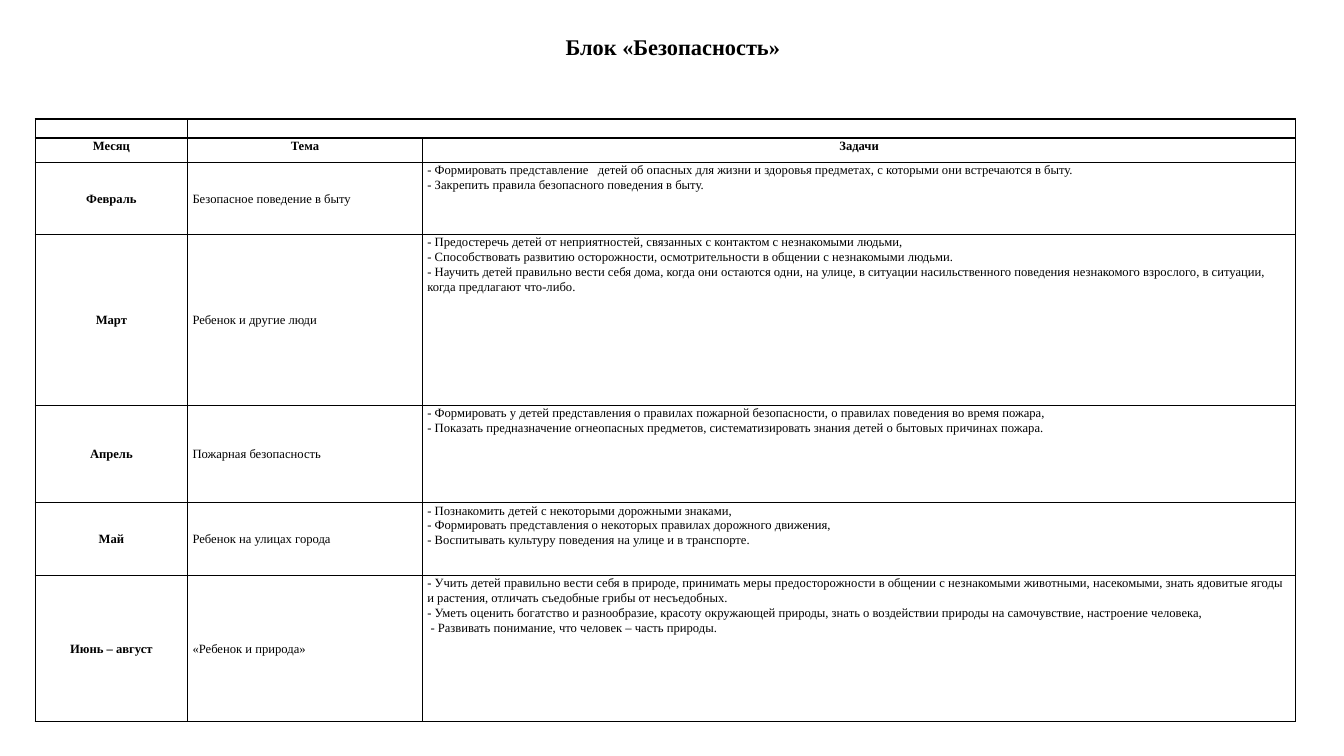
from dataclasses import dataclass

from lxml.etree import SubElement
from pptx import Presentation
from pptx.dml.color import RGBColor
from pptx.enum.text import MSO_ANCHOR, PP_ALIGN
from pptx.oxml.ns import qn
from pptx.table import _Cell
from pptx.util import Pt

FONT = "Times New Roman"
BLACK = "000000"
WHITE = "FFFFFF"
BODY_SIZE = 9
COLUMN_WIDTHS = [108.72, 167.76, 624]
TITLE_HEIGHT, EMPTY_HEIGHT, HEADER_HEIGHT = 72, 13.68, 17.28


@dataclass
class Month:
    name: str
    topic: str
    tasks: list[str]
    height: float


MONTHS = [
    Month("Февраль", "Безопасное поведение в быту", [
        "- Формировать представление   детей об опасных для жизни и здоровья предметах, "
        "с которыми они встречаются в быту.",
        "- Закрепить правила безопасного поведения в быту.",
    ], 51.84),
    Month("Март", "Ребенок и другие люди", [
        "- Предостеречь детей от неприятностей, связанных с контактом с незнакомыми людьми,",
        "- Способствовать развитию осторожности, осмотрительности в общении с незнакомыми людьми.",
        "- Научить детей правильно вести себя дома, когда они остаются одни, на улице, "
        "в ситуации насильственного поведения незнакомого взрослого, в ситуации, "
        "когда предлагают что-либо.",
    ], 121.68),
    Month("Апрель", "Пожарная безопасность", [
        "- Формировать у детей представления о правилах пожарной безопасности, "
        "о правилах поведения во время пожара,",
        "- Показать предназначение огнеопасных предметов, систематизировать знания детей "
        "о бытовых причинах пожара.",
    ], 69.84),
    Month("Май", "Ребенок на улицах города", [
        "- Познакомить детей с некоторыми дорожными знаками,",
        "- Формировать представления о некоторых правилах дорожного движения,",
        "- Воспитывать культуру поведения на улице и в транспорте.",
    ], 51.84),
    Month("Июнь – август", "«Ребенок и природа»", [
        "- Учить детей правильно вести себя в природе, принимать меры предосторожности "
        "в общении с незнакомыми животными, насекомыми, знать ядовитые ягоды и растения, "
        "отличать съедобные грибы от несъедобных.",
        "- Уметь оценить богатство и разнообразие, красоту окружающей природы, "
        "знать о воздействии природы на самочувствие, настроение человека,",
        " - Развивать понимание, что человек – часть природы.",
    ], 104.4),
]


def color(value: str) -> RGBColor:
    return RGBColor.from_string(value)


def set_borders(cell: _Cell, sides: str) -> None:
    """Draw black lines on the given sides, a subset of LRTB in that order."""
    properties = cell._tc.get_or_add_tcPr()
    for side in sides:
        line = SubElement(properties, qn(f"a:ln{side}"), w=str(Pt(1)))
        fill = SubElement(line, qn("a:solidFill"))
        SubElement(fill, qn("a:srgbClr"), val=BLACK)


def fill_cell(cell: _Cell, lines: list[str], bold: bool = False, centered: bool = False,
              middle: bool = False, size: float = BODY_SIZE, sides: str = "LRTB") -> None:
    set_borders(cell, sides)
    cell.fill.solid()
    cell.fill.fore_color.rgb = color(WHITE)
    cell.margin_left = cell.margin_right = Pt(3.6)
    cell.margin_top = cell.margin_bottom = Pt(0)
    cell.vertical_anchor = MSO_ANCHOR.MIDDLE if middle else MSO_ANCHOR.TOP
    cell.text = "\n".join(lines)
    for paragraph in cell.text_frame.paragraphs:
        paragraph.alignment = PP_ALIGN.CENTER if centered else PP_ALIGN.LEFT
        paragraph.line_spacing = 1.07
        paragraph.font.name = FONT
        paragraph.font.size = Pt(size)
        paragraph.font.bold = bold
        paragraph.font.color.rgb = color(BLACK)
        if not paragraph.runs:
            SubElement(paragraph._p, qn("a:endParaRPr"), sz=str(size * 100))


def main() -> None:
    presentation = Presentation()
    presentation.slide_width, presentation.slide_height = Pt(960), Pt(540)
    slide = presentation.slides.add_slide(presentation.slide_layouts[6])

    heights = [TITLE_HEIGHT, EMPTY_HEIGHT, HEADER_HEIGHT, *(month.height for month in MONTHS)]
    table = slide.shapes.add_table(
        len(heights), len(COLUMN_WIDTHS), Pt(25.2), Pt(12.96),
        Pt(sum(COLUMN_WIDTHS)), Pt(sum(heights))).table
    table.first_row = table.horz_banding = False
    for column, width in zip(table.columns, COLUMN_WIDTHS):
        column.width = Pt(width)
    for row, height in zip(table.rows, heights):
        row.height = Pt(height)

    title = table.cell(0, 0)
    title.merge(table.cell(0, 2))
    fill_cell(title, ["Блок «Безопасность»"], bold=True, centered=True, size=16, sides="B")
    title.margin_left, title.margin_top = Pt(14), Pt(11)

    table.cell(1, 1).merge(table.cell(1, 2))
    for cell in table.rows[1].cells:
        fill_cell(cell, [])
    for cell, heading in zip(table.rows[2].cells, ["Месяц", "Тема", "Задачи"]):
        fill_cell(cell, [heading], bold=True, centered=True)
    for index, month in enumerate(MONTHS, start=3):
        fill_cell(table.cell(index, 0), [month.name], bold=True, centered=True, middle=True)
        fill_cell(table.cell(index, 1), [month.topic], middle=True)
        fill_cell(table.cell(index, 2), month.tasks)

    presentation.save("out.pptx")


if __name__ == "__main__":
    main()
